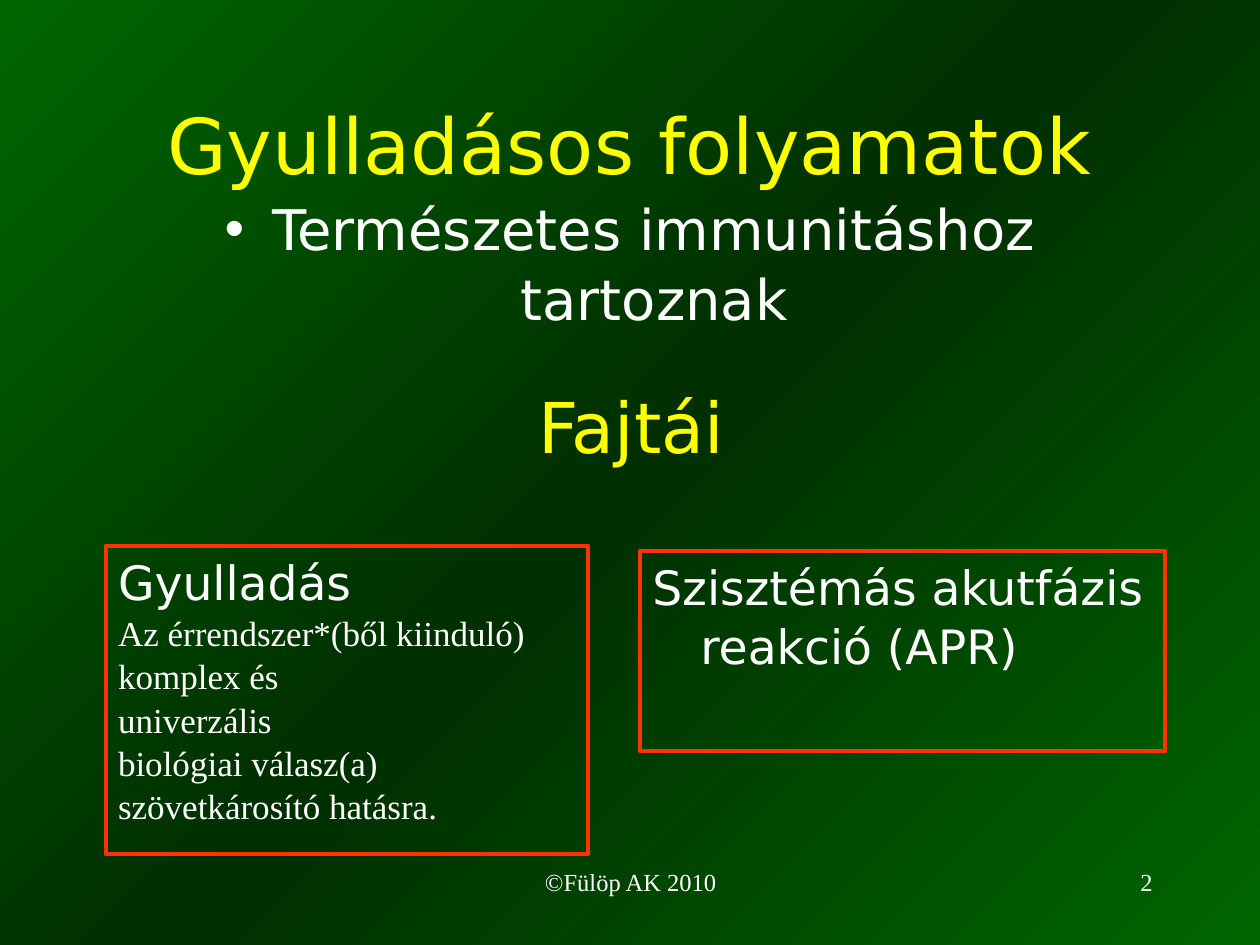
import copy
from dataclasses import dataclass

import pptx
import pptx.dml.color
import pptx.enum.shapes
import pptx.enum.text
import pptx.oxml.ns
import pptx.util
from pptx.util import Cm

Color = pptx.dml.color.RGBColor
Align = pptx.enum.text.PP_ALIGN
Anchor = pptx.enum.text.MSO_ANCHOR


@dataclass(frozen=True)
class Theme:
    sans: str = "DejaVu Sans"
    serif: str = "Times New Roman"
    heading: str = "FFFF00"
    text: str = "FFFFFF"
    frame: str = "FF3300"
    background: tuple = ("006600", "002F00", "006600")
    title_size: int = 44
    subtitle_size: int = 40
    list_size: int = 32
    card_size: int = 27
    detail_size: int = 20
    footer_size: int = 14
    frame_width: float = 2.25
    space_ratio: float = 0.2
    line_spacing: float = 1.03
    hanging: float = 0.97


@dataclass(frozen=True)
class Box:
    left: float
    top: float
    width: float
    height: float

    def lengths(self):
        return Cm(self.left), Cm(self.top), Cm(self.width), Cm(self.height)


THEME = Theme()


def place(shape, box):
    shape.left, shape.top, shape.width, shape.height = box.lengths()


def prepare_frame(shape, anchor):
    text_frame = shape.text_frame
    text_frame.word_wrap = True
    text_frame.auto_size = pptx.enum.text.MSO_AUTO_SIZE.NONE
    text_frame.vertical_anchor = anchor
    return text_frame


def style_paragraph(paragraph, size, font=THEME.sans, color=THEME.text, align=Align.LEFT):
    paragraph.alignment = align
    for run in paragraph.runs:
        run.font.name = font
        run.font.size = pptx.util.Pt(size)
        run.font.color.rgb = Color.from_string(color)


def space_paragraph(paragraph, before):
    paragraph.space_before = pptx.util.Pt(before)
    paragraph.line_spacing = THEME.line_spacing
    properties = paragraph._p.get_or_add_pPr()
    properties.set("marL", str(Cm(THEME.hanging)))
    properties.set("indent", str(-Cm(THEME.hanging)))


def paint_background(slide):
    fill = slide.background.fill
    fill.gradient()
    fill.gradient_angle = 315
    stop_list = slide.element.find(".//" + pptx.oxml.ns.qn("a:gsLst"))
    stop_list.append(copy.deepcopy(stop_list[0]))
    last = len(THEME.background) - 1
    for index, (stop, color) in enumerate(zip(fill.gradient_stops, THEME.background)):
        stop.position = index / last
        stop.color.rgb = Color.from_string(color)


def fill_heading(shape, box, text, size):
    place(shape, box)
    text_frame = prepare_frame(shape, Anchor.MIDDLE)
    text_frame.text = text
    style_paragraph(text_frame.paragraphs[0], size, color=THEME.heading, align=Align.CENTER)


def fill_list(shape, box, text):
    place(shape, box)
    text_frame = prepare_frame(shape, Anchor.TOP)
    text_frame.text = text
    paragraph = text_frame.paragraphs[0]
    style_paragraph(paragraph, THEME.list_size, align=Align.CENTER)
    space_paragraph(paragraph, THEME.list_size * THEME.space_ratio)


def add_card(slide, box, heading, details=()):
    card = slide.shapes.add_shape(pptx.enum.shapes.MSO_SHAPE.RECTANGLE, *box.lengths())
    card.shadow.inherit = False
    card.fill.background()
    card.line.color.rgb = Color.from_string(THEME.frame)
    card.line.width = pptx.util.Pt(THEME.frame_width)
    text_frame = prepare_frame(card, Anchor.TOP)
    text_frame.text = "\n".join((heading, *details))
    first, *others = text_frame.paragraphs
    style_paragraph(first, THEME.card_size)
    space_paragraph(first, THEME.card_size * THEME.space_ratio)
    for paragraph in others:
        style_paragraph(paragraph, THEME.detail_size, THEME.serif)
        space_paragraph(paragraph, 0)


def add_footer(slide, box, credit, number):
    number_width = 5.28
    parts = (
        (credit, 0, 8.05, Align.CENTER),
        (number, box.width - number_width, number_width, Align.RIGHT),
    )
    for text, offset, width, align in parts:
        part = Box(box.left + offset, box.top, width, box.height)
        shape = slide.shapes.add_textbox(*part.lengths())
        text_frame = prepare_frame(shape, Anchor.TOP)
        text_frame.text = text
        style_paragraph(text_frame.paragraphs[0], THEME.footer_size, THEME.serif, align=align)


def main():
    presentation = pptx.Presentation()
    presentation.slide_width, presentation.slide_height = Cm(25.4), Cm(19.05)
    slide = presentation.slides.add_slide(presentation.slide_layouts[1])
    paint_background(slide)
    fill_heading(slide.shapes.title, Box(1.9, 1.3, 21.59, 3.18),
                 "Gyulladásos folyamatok", THEME.title_size)
    fill_list(slide.placeholders[1], Box(3.56, 3.76, 18.29, 2.06),
              "Természetes immunitáshoz tartoznak")
    kinds_box = Box(0.97, 6.86, 23.5, 3.45)
    fill_heading(slide.shapes.add_textbox(*kinds_box.lengths()), kinds_box,
                 "Fajtái", THEME.subtitle_size)
    add_card(slide, Box(2.13, 11, 9.73, 6.22), "Gyulladás", (
        "Az érrendszer*(ből kiinduló)",
        "komplex és",
        "univerzális",
        "biológiai válasz(a)",
        "szövetkárosító hatásra.",
    ))
    add_card(slide, Box(12.9, 11.1, 10.59, 4.04), "Szisztémás akutfázis reakció (APR)")
    add_footer(slide, Box(8.69, 17.35, 14.8, 1.27), "©Fülöp AK 2010", "2")
    presentation.save("out.pptx")


if __name__ == "__main__":
    main()
